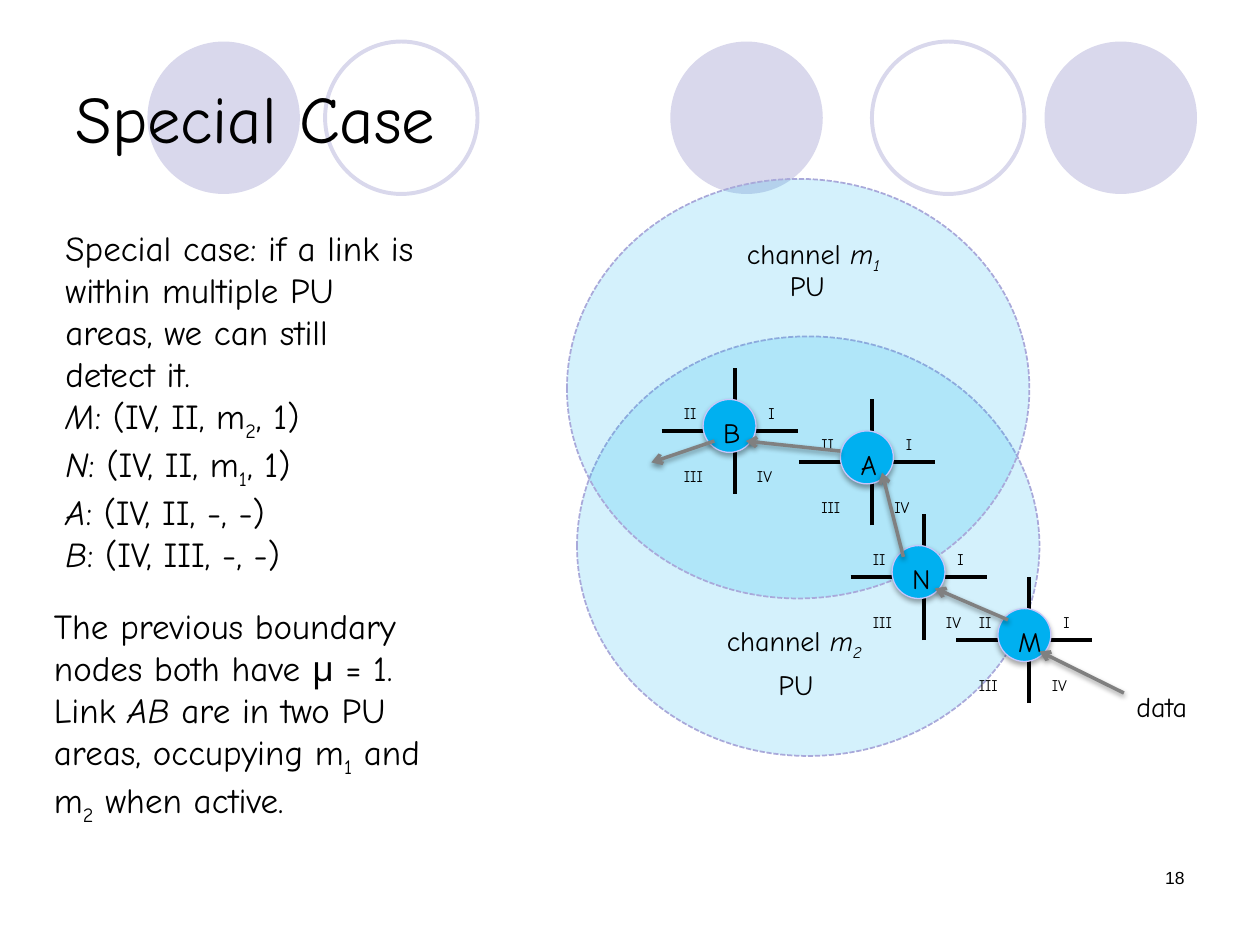
from lxml.etree import SubElement
from pptx import Presentation
from pptx.dml.color import RGBColor
from pptx.enum.dml import MSO_LINE
from pptx.enum.shapes import MSO_CONNECTOR, MSO_SHAPE
from pptx.enum.text import MSO_ANCHOR, PP_ALIGN
from pptx.oxml.ns import qn
from pptx.util import Inches, Pt

FONT = "Comic Neue"
BLACK, GRAY, BLUE, LAVENDER = "000000", "808080", "00B0F0", "D9D8EC"

# Top-left corner of each node's disc
NODES = {"A": (6.67, 3.42), "B": (5.58, 3.17), "M": (7.92, 4.83), "N": (7.08, 4.33)}
# Quadrant label: offset from the disc's corner, box width
QUADRANTS = {
    "I": (0.42, -0.17, 0.42),
    "II": (-0.25, -0.17, 0.83),
    "III": (-0.25, 0.33, 0.83),
    "IV": (0.33, 0.33, 0.67),
}
LINKS = [
    ((6.67, 3.58), (5.92, 3.5)),
    ((7.17, 4.42), (7, 3.75)),
    ((8, 4.92), (7.42, 4.67)),
    ((8.92, 5.5), (8.25, 5.17)),
    ((5.67, 3.5), (5.17, 3.67)),
]

# Each run is (text, style): "i" is italic, "s" is subscript
CASES = [
    [("Special case: if a link is within multiple PU areas, we can still detect it.", "")],
    [("M", "i"), (": (IV, II, m", ""), ("2", "s"), (", 1)", "")],
    [("N", "i"), (": (IV, II, m", ""), ("1", "s"), (", 1)", "")],
    [("A", "i"), (": (IV, II, -, -)", "")],
    [("B", "i"), (": (IV, III, -, -)", "")],
]
CONCLUSION = [
    [("The previous boundary nodes both have μ = 1.", "")],
    [("Link ", ""), ("AB", "i"), (" are in two PU areas, occupying m", ""), ("1", "s"),
     (" and m", ""), ("2", "s"), (" when active.", "")],
]


def color(value):
    return RGBColor.from_string(value)


def add_text(slide, box, paragraphs, size=16, font=FONT):
    """Add a text box; paragraphs is a string or a list of lists of runs."""
    if isinstance(paragraphs, str):
        paragraphs = [[(paragraphs, "")]]
    text_frame = slide.shapes.add_textbox(*map(Inches, box)).text_frame
    text_frame.word_wrap = True
    for index, runs in enumerate(paragraphs):
        paragraph = text_frame.add_paragraph() if index else text_frame.paragraphs[0]
        for text, style in runs:
            run = paragraph.add_run()
            run.text = text
            run.font.name = font
            run.font.size = Pt(size)
            run.font.color.rgb = color(BLACK)
            run.font.italic = "i" in style
            if "s" in style:
                run.font._element.set("baseline", "-25000")
    return text_frame


def set_alpha(color_element, percent):
    SubElement(color_element, qn("a:alpha"), val=str(percent * 1000))


def add_shadow(effects, distance, percent):
    """Put a soft downward shadow into an effect list."""
    shadow = SubElement(effects, qn("a:outerShdw"), blurRad=str(Pt(3.1)),
                        dist=str(Pt(distance)), dir="5400000", rotWithShape="0")
    set_alpha(SubElement(shadow, qn("a:srgbClr"), val=BLACK), percent)


def add_circle(slide, box, fill=None, line=None, width=1):
    shape = slide.shapes.add_shape(MSO_SHAPE.OVAL, *map(Inches, box))
    shape.shadow.inherit = False
    if fill:
        shape.fill.solid()
        shape.fill.fore_color.rgb = color(fill)
    else:
        shape.fill.background()
    if line:
        shape.line.color.rgb = color(line)
        shape.line.width = Pt(width)
    else:
        shape.line.fill.background()
    return shape


def add_channel_area(slide, left, top):
    area = add_circle(slide, (left, top, 3.67, 3.33), BLUE, "A9A9DA")
    area.line.dash_style = MSO_LINE.SQUARE_DOT
    set_alpha(area._element.spPr.find(qn("a:solidFill")).find(qn("a:srgbClr")), 17)


def add_line(slide, start, end, line=BLACK, width=2.25):
    """Add a straight line and return it with its empty effect list."""
    connector = slide.shapes.add_connector(
        MSO_CONNECTOR.STRAIGHT, *map(Inches, (*start, *end)))
    connector.line.color.rgb = color(line)
    connector.line.width = Pt(width)
    return connector, SubElement(connector._element.spPr, qn("a:effectLst"))


def add_arrow(slide, start, end):
    connector, effects = add_line(slide, start, end, GRAY, 2)
    SubElement(connector.line._get_or_add_ln(), qn("a:tailEnd"), type="arrow")
    add_shadow(effects, 1.6, 38)


def add_node(slide, name, left, top):
    """Add a disc with its axes, name and quadrant labels."""
    center_x, center_y = left + 0.25, top + 0.25
    add_line(slide, (left - 0.33, center_y), (left + 0.75, center_y))
    add_line(slide, (center_x, top + 0.75), (center_x, top - 0.25))
    disc = add_circle(slide, (left, top, 0.42, 0.42), BLUE, "C6C6FB", 0.75)
    add_shadow(disc._element.spPr.find(qn("a:effectLst")), 1.8, 35)
    label = add_text(slide, (left, top + 0.08, 0.75, 0.33), name)
    label.margin_left = Inches(0.16)
    for quadrant, (x, y, width) in QUADRANTS.items():
        add_text(slide, (left + x, top + y, width, 0.42), [[(quadrant, "s")]])


def add_channel_label(slide, number, left, top):
    runs = [("channel ", ""), ("m", "i"), (number, "is")]
    add_text(slide, (left, top, 1.83, 0.6), [runs])


def main():
    presentation = Presentation()
    presentation.slide_width, presentation.slide_height = Inches(10), Inches(7.5)
    slide = presentation.slides.add_slide(presentation.slide_layouts[6])

    for left in (5.32, 8.29, 1.17):
        add_circle(slide, (left, 0.33, 1.21, 1.21), fill=LAVENDER)
    for left in (6.92, 2.58):
        add_circle(slide, (left, 0.33, 1.21, 1.21), line=LAVENDER, width=2.25)

    title = add_text(slide, (0.5, 0.3, 9, 1.25), "Special Case", 38)
    title.vertical_anchor = MSO_ANCHOR.MIDDLE
    add_text(slide, (0.42, 1.75, 3.08, 3.17), CASES, 20)
    add_text(slide, (0.33, 4.75, 3.5, 2), CONCLUSION, 20)

    add_channel_area(slide, 4.58, 2.67)
    add_channel_area(slide, 4.5, 1.42)
    add_channel_label(slide, "1", 5.83, 1.83)
    add_channel_label(slide, "2", 5.67, 4.9)
    add_text(slide, (6.17, 2.08, 0.58, 0.42), "PU")
    add_text(slide, (6.08, 5.25, 0.58, 0.42), "PU")

    for name, (left, top) in NODES.items():
        add_node(slide, name, left, top)
    for start, end in LINKS:
        add_arrow(slide, start, end)
    add_text(slide, (8.92, 5.42, 0.83, 0.42), "data")

    page_number = add_text(slide, (7.17, 6.83, 2.33, 0.5), "18", 10, "Arial")
    page_number.paragraphs[0].alignment = PP_ALIGN.RIGHT
    presentation.save("out.pptx")


if __name__ == "__main__":
    main()
